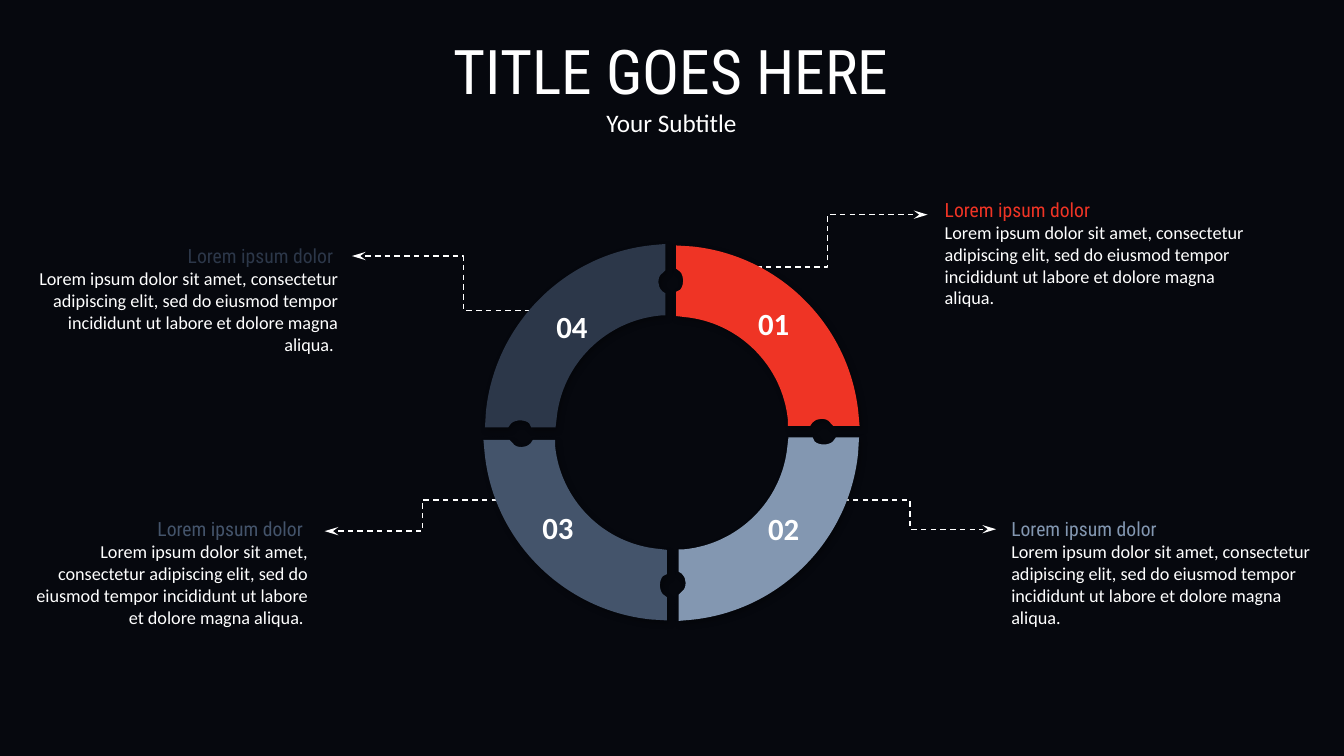
from lxml.etree import SubElement
from pptx import Presentation
from pptx.dml.color import RGBColor
from pptx.enum.dml import MSO_LINE_DASH_STYLE as Dash
from pptx.enum.shapes import MSO_CONNECTOR as Connector, MSO_SHAPE as Shape
from pptx.enum.text import MSO_AUTO_SIZE as AutoSize, PP_ALIGN as Align
from pptx.oxml.ns import qn
from pptx.util import Inches, Pt

WHITE = "FFFFFF"
HEADING_FONT = "Roboto Condensed"
BODY_FONT = "Calibri"
LOREM = ("Lorem ipsum dolor sit amet, consectetur adipiscing elit, sed do eiusmod "
         "tempor incididunt ut labore et dolore magna aliqua.")

QUADRANT = [
    (1.79, 0), (1.79, 0.26), (1.76, 0.29),
    (1.73, 0.31, 1.72, 0.34, 1.72, 0.38), (1.72, 0.41, 1.73, 0.44, 1.76, 0.47),
    (1.79, 0.49), (1.79, 0.71), (1.74, 0.71),
    (1.2, 0.76, 0.76, 1.19, 0.71, 1.74),
    (0.7, 1.82), (0.46, 1.82), (0.44, 1.78),
    (0.42, 1.76, 0.38, 1.75, 0.35, 1.75), (0.32, 1.75, 0.28, 1.76, 0.26, 1.78),
    (0.23, 1.82), (0, 1.82), (0.01, 1.66),
    (0.1, 0.79, 0.8, 0.09, 1.68, 0.01),
]

ARROWS = [
    ((7.21, 2.65), (9.2, 2.13), "a:tailEnd"),
    ((8.17, 4.96), (9.88, 5.25), "a:tailEnd"),
    ((3.49, 2.54), (5.7, 3.08), "a:headEnd"),
    ((3.22, 5.27), (5.16, 4.96), "a:headEnd"),
]

LABELS = [
    ((9.3, 1.93, 3.29, 1.21), "EF3425", Align.LEFT, ""),
    ((9.96, 5.1, 3.29, 1.21), "8397B1", Align.LEFT, ""),
    ((0.11, 2.39, 3.31, 1.21), "2C3749", Align.RIGHT, " "),
    ((0.15, 5.1, 2.97, 1.21), "44546B", Align.RIGHT, " "),
]

PIECES = [
    ("01", (6.72, 2.42), 90, "EF3425", (7.42, 2.97)),
    ("02", (6.73, 4.34), 180, "8397B1", (7.52, 5.01)),
    ("03", (4.81, 4.35), 270, "44546B", (5.28, 5)),
    ("04", (4.81, 2.42), 0, "2C3749", (5.42, 3)),
]


def color(value):
    return RGBColor.from_string(value)


class RingSlide:
    """Draws the elements of the ring diagram in one style on one slide."""

    def __init__(self, deck, background):
        self.page = deck.slides.add_slide(deck.slide_layouts[6])
        fill = self.page.background.fill
        fill.solid()
        fill.fore_color.rgb = color(background)

    def shade(self, width, height, tint, opacity):
        shape = self.page.shapes.add_shape(Shape.RECTANGLE, 0, 0, width, height)
        shape.shadow.inherit = False
        shape.line.fill.background()
        shape.fill.solid()
        shape.fill.fore_color.rgb = color(tint)
        tone = shape._element.spPr.find(qn("a:solidFill")).find(qn("a:srgbClr"))
        SubElement(tone, qn("a:alpha"), val=str(opacity * 1000))

    def text(self, place, lines, align=Align.LEFT, insets=(0.1, 0.05), wrap=True, parent=None):
        box = (parent or self.page).shapes.add_textbox(*map(Inches, place))
        frame = box.text_frame
        frame.word_wrap = wrap
        frame.auto_size = AutoSize.SHAPE_TO_FIT_TEXT
        frame.margin_left = frame.margin_right = Inches(insets[0])
        frame.margin_top = frame.margin_bottom = Inches(insets[1])
        frame.text = "\n".join(line[0] for line in lines)
        for para, (_, font, size, tint, bold) in zip(frame.paragraphs, lines):
            para.alignment = align
            for span in para.runs:
                span.font.name = font
                span.font.size = Pt(size)
                span.font.bold = bold
                span.font.color.rgb = color(tint)

    def arrow(self, start, end, tip):
        line = self.page.shapes.add_connector(Connector.ELBOW, *map(Inches, start + end))
        line.line.color.rgb = color(WHITE)
        line.line.width = Pt(1)
        line.line.dash_style = Dash.DASH
        properties = line._element.spPr
        SubElement(properties.find(qn("a:ln")), qn(tip), type="stealth", w="med", len="lg")
        SubElement(properties, qn("a:effectLst"))

    def piece(self, number, corner, turn, tint, spot):
        group = self.page.shapes.add_group_shape()
        ends = [(Inches(segment[-2]), Inches(segment[-1])) for segment in QUADRANT]
        builder = group.shapes.build_freeform(*ends[0])
        builder.add_line_segments(ends[1:], close=True)
        shape = builder.convert_to_shape(*map(Inches, corner))
        self.bend(shape)
        shape.rotation = turn
        shape.fill.solid()
        shape.fill.fore_color.rgb = color(tint)
        shape.line.fill.background()
        self.cast_shadow(shape)
        self.text(spot + (0.52, 0.47), [(number, BODY_FONT, 22, WHITE, True)],
                  wrap=False, parent=group)

    def bend(self, shape):
        straight = list(shape._element.spPr.iter(qn("a:lnTo")))
        for line, segment in zip(straight, QUADRANT[1:]):
            if len(segment) == 6:
                line.tag = qn("a:cubicBezTo")
                end = line[0]
                for x, y in (segment[:2], segment[2:4]):
                    end.addprevious(end.makeelement(
                        qn("a:pt"), {"x": str(Inches(x)), "y": str(Inches(y))}))

    def cast_shadow(self, shape):
        shape.shadow.inherit = False
        effects = shape._element.spPr.find(qn("a:effectLst"))
        shadow = SubElement(effects, qn("a:outerShdw"), blurRad=str(Pt(4.5)),
                            dist=str(Pt(2.6)), dir=str(53 * 60000), rotWithShape="0")
        black = SubElement(shadow, qn("a:srgbClr"), val="000000")
        SubElement(black, qn("a:alpha"), val="30000")


def main():
    deck = Presentation()
    deck.slide_width, deck.slide_height = Inches(13.33), Inches(7.5)
    ring = RingSlide(deck, "222A49")
    ring.shade(deck.slide_width, deck.slide_height, "000000", 80)
    for start, end, tip in ARROWS:
        ring.arrow(start, end, tip)
    ring.text((3.65, 0.28, 6.02, 1.14),
              [("TITLE GOES HERE", HEADING_FONT, 44, WHITE, False),
               ("Your Subtitle", BODY_FONT, 18, WHITE, False)], Align.CENTER)
    for place, tint, align, ending in LABELS:
        ring.text(place, [("Lorem ipsum dolor" + ending, HEADING_FONT, 14, tint, False),
                          (LOREM + ending, BODY_FONT, 13, WHITE, False)],
                  align, insets=(0.07, 0.03))
    for piece in PIECES:
        ring.piece(*piece)
    deck.save("out.pptx")


if __name__ == "__main__":
    main()
